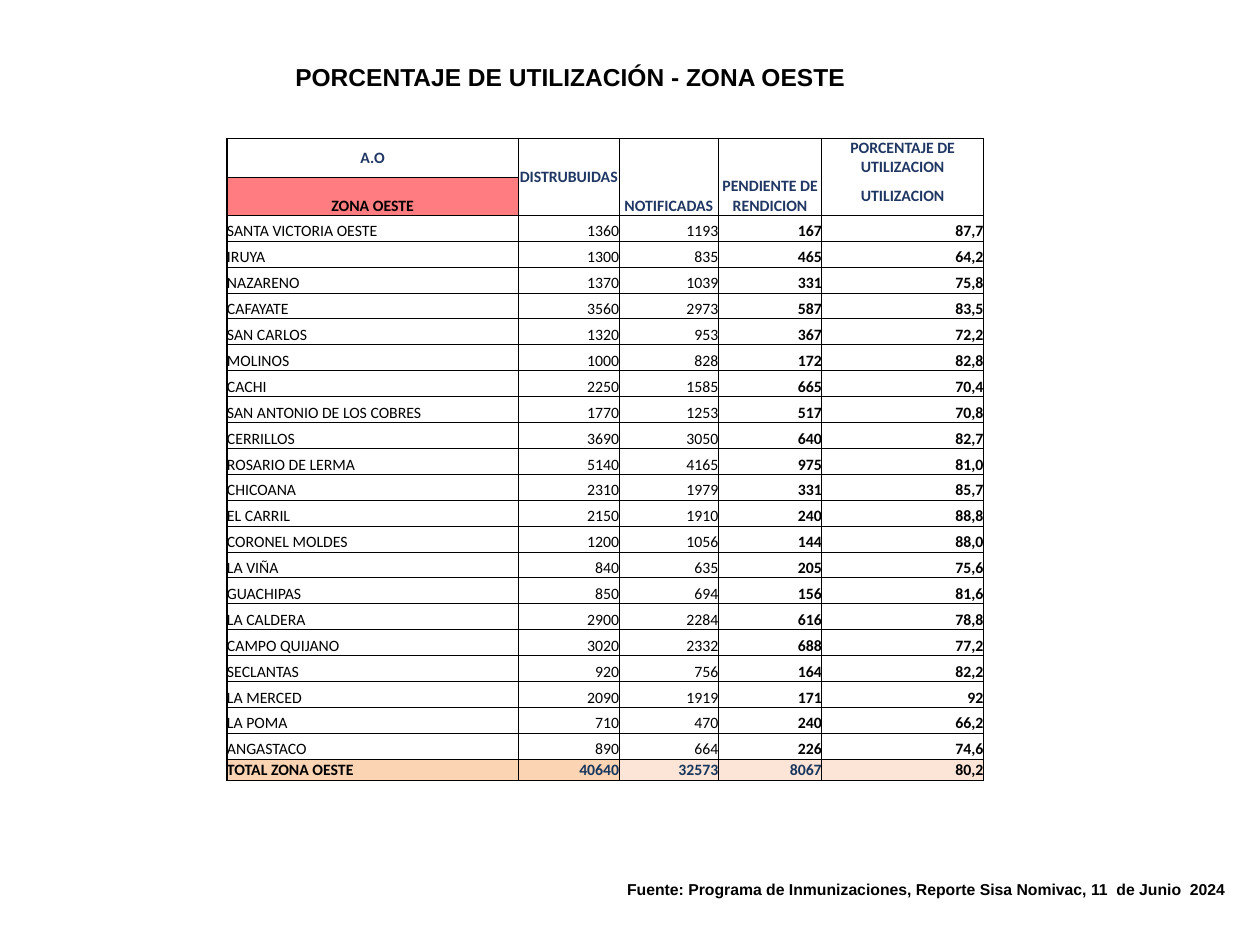
import pptx
import pptx.dml.color
import pptx.enum.text
import pptx.oxml
import pptx.oxml.ns
import pptx.util

Pt = pptx.util.Pt
ALIGN = pptx.enum.text.PP_ALIGN
ANCHOR = pptx.enum.text.MSO_ANCHOR

COLORS = {
    "black": "000000",
    "header": "203764",
    "total": "17365D",
    "zone_fill": "FF7C80",
    "total_fill": "FBD4B4",
    "total_light_fill": "FCE4D6",
}

COLUMN_WIDTHS = [166.4, 57.7, 56.7, 59.1, 92.4]
HEADER_HEIGHT, BODY_HEIGHT, TOTAL_HEIGHT = 21.7, 14.8, 12
THIN, THICK = 0.5, 1

HEADERS = [
    ["A.O", "DISTRUBUIDAS ", "NOTIFICADAS", "PENDIENTE DE RENDICION", "PORCENTAJE DE UTILIZACION"],
    ["ZONA OESTE", None, None, None, "UTILIZACION"],
]
AREAS = [
    ["SANTA VICTORIA OESTE", "1360", "1193", "167", "87,7"],
    ["IRUYA", "1300", "835", "465", "64,2"],
    ["NAZARENO", "1370", "1039", "331", "75,8"],
    ["CAFAYATE", "3560", "2973", "587", "83,5"],
    ["SAN CARLOS", "1320", "953", "367", "72,2"],
    ["MOLINOS", "1000", "828", "172", "82,8"],
    ["CACHI", "2250", "1585", "665", "70,4"],
    ["SAN ANTONIO DE LOS COBRES", "1770", "1253", "517", "70,8"],
    ["CERRILLOS", "3690", "3050", "640", "82,7"],
    ["ROSARIO DE LERMA", "5140", "4165", "975", "81,0"],
    ["CHICOANA", "2310", "1979", "331", "85,7"],
    ["EL CARRIL", "2150", "1910", "240", "88,8"],
    ["CORONEL MOLDES", "1200", "1056", "144", "88,0"],
    ["LA VIÑA", "840", "635", "205", "75,6"],
    ["GUACHIPAS", "850", "694", "156", "81,6"],
    ["LA CALDERA", "2900", "2284", "616", "78,8"],
    ["CAMPO QUIJANO", "3020", "2332", "688", "77,2"],
    ["SECLANTAS", "920", "756", "164", "82,2"],
    ["LA MERCED", "2090", "1919", "171", "92"],
    ["LA POMA", "710", "470", "240", "66,2"],
    ["ANGASTACO", "890", "664", "226", "74,6"],
]
TOTAL = ["TOTAL ZONA OESTE", "40640", "32573", "8067", "80,2"]


def write_text(frame, text, *, font="Arial", size=9, color="black", bold=True, align=ALIGN.LEFT):
    paragraph = frame.paragraphs[0]
    paragraph.alignment = align
    run = paragraph.add_run()
    run.text = text
    run.font.name = font
    run.font.size = Pt(size)
    run.font.bold = bold
    run.font.color.rgb = pptx.dml.color.RGBColor.from_string(COLORS[color])


def set_borders(cell, widths):
    """Draw the left, right, top and bottom lines; width 0 hides a line."""
    properties = cell._tc.get_or_add_tcPr()
    for side, width in zip("LRTB", widths):
        paint = (f'<a:solidFill><a:srgbClr val="{COLORS["black"]}"/></a:solidFill>'
                 if width else "<a:noFill/>")
        properties.append(pptx.oxml.parse_xml(
            f'<a:ln{side} {pptx.oxml.ns.nsdecls("a")} w="{Pt(width)}">{paint}</a:ln{side}>'))


def border_widths(row, column, last_row):
    """Thick frame, thin grid, with a heavier percentage column in header and total."""
    edge_rows = (0, 1, last_row)
    left = THICK if column == 0 or (column == 4 and row in edge_rows) else THIN
    right = THICK if column == 4 or (column == 3 and row in edge_rows) else THIN
    top = THICK if row == 0 or (column == 4 and row == 2) else THIN
    bottom = THICK if column == 4 and row == 1 else THIN
    if column == 4 and row == 0:
        bottom = 0
    if column == 4 and row == 1:
        top = 0
    return left, right, top, bottom


def cell_format(row, column, last_row):
    """Return the text format, the anchor and the fill colour of a cell."""
    if row < 2:
        is_zone = (row, column) == (1, 0)
        middle = column == 4 or (row == 0 and column < 2)
        text_format = {"align": ALIGN.CENTER, "color": "black" if is_zone else "header"}
        return text_format, ANCHOR.MIDDLE if middle else ANCHOR.BOTTOM, "zone_fill" if is_zone else None
    text_format = {"align": ALIGN.RIGHT if column else ALIGN.LEFT}
    if row < last_row:
        text_format["bold"] = column > 2
        return text_format, ANCHOR.BOTTOM, None
    text_format["color"] = "total" if 0 < column < 4 else "black"
    return text_format, ANCHOR.BOTTOM, "total_fill" if column < 2 else "total_light_fill"


class SlideBuilder:
    def __init__(self, presentation):
        self.slide = presentation.slides.add_slide(presentation.slide_layouts[5])
        self.heading_font = "Arial"
        self.table_font = "Calibri"

    def title(self, text, left, top, width, height):
        shape = self.slide.shapes.title
        shape.left, shape.top, shape.width, shape.height = map(Pt, (left, top, width, height))
        shape.text_frame.vertical_anchor = ANCHOR.TOP
        shape.text_frame.word_wrap = True
        write_text(shape.text_frame, text, font=self.heading_font, size=14, align=ALIGN.CENTER)

    def source_note(self, text, left, top, width, height):
        shape = self.slide.shapes.add_textbox(*map(Pt, (left, top, width, height)))
        shape.text_frame.word_wrap = True
        write_text(shape.text_frame, text, font=self.heading_font, align=ALIGN.RIGHT)

    def table(self, rows, heights, left, top):
        table = self.slide.shapes.add_table(
            len(rows), len(COLUMN_WIDTHS), Pt(left), Pt(top),
            Pt(sum(COLUMN_WIDTHS)), Pt(sum(heights))).table
        table.first_row = table.horz_banding = False
        for column, width in zip(table.columns, COLUMN_WIDTHS):
            column.width = Pt(width)
        for row, height in zip(table.rows, heights):
            row.height = Pt(height)
        for row, values in enumerate(rows):
            for column, value in enumerate(values):
                self.table_cell(table.cell(row, column), value, row, column, len(rows) - 1)
        for column in (1, 2, 3):
            table.cell(0, column).merge(table.cell(1, column))

    def table_cell(self, cell, value, row, column, last_row):
        text_format, anchor, fill = cell_format(row, column, last_row)
        cell.margin_left = cell.margin_right = cell.margin_top = cell.margin_bottom = 0
        cell.vertical_anchor = anchor
        set_borders(cell, border_widths(row, column, last_row))
        if fill:
            cell.fill.solid()
            cell.fill.fore_color.rgb = pptx.dml.color.RGBColor.from_string(COLORS[fill])
        else:
            cell.fill.background()
        if value is None:
            cell.text_frame.paragraphs[0].font.size = Pt(9)
        else:
            write_text(cell.text_frame, value, font=self.table_font, **text_format)


def main():
    presentation = pptx.Presentation()
    presentation.slide_width, presentation.slide_height = Pt(720), Pt(540)
    builder = SlideBuilder(presentation)

    # Heading
    builder.title("PORCENTAJE DE UTILIZACIÓN - ZONA OESTE", 116, 31.7, 419.8, 28.8)

    # Use of doses by area
    heights = [HEADER_HEIGHT] * 2 + [BODY_HEIGHT] * len(AREAS) + [TOTAL_HEIGHT]
    builder.table(HEADERS + AREAS + [TOTAL], heights, 129.7, 79.2)

    # Source
    builder.source_note(
        "Fuente: Programa de Inmunizaciones, Reporte Sisa Nomivac, 11  de Junio  2024",
        345.6, 499, 361.4, 20.9)

    presentation.save("out.pptx")


if __name__ == "__main__":
    main()
